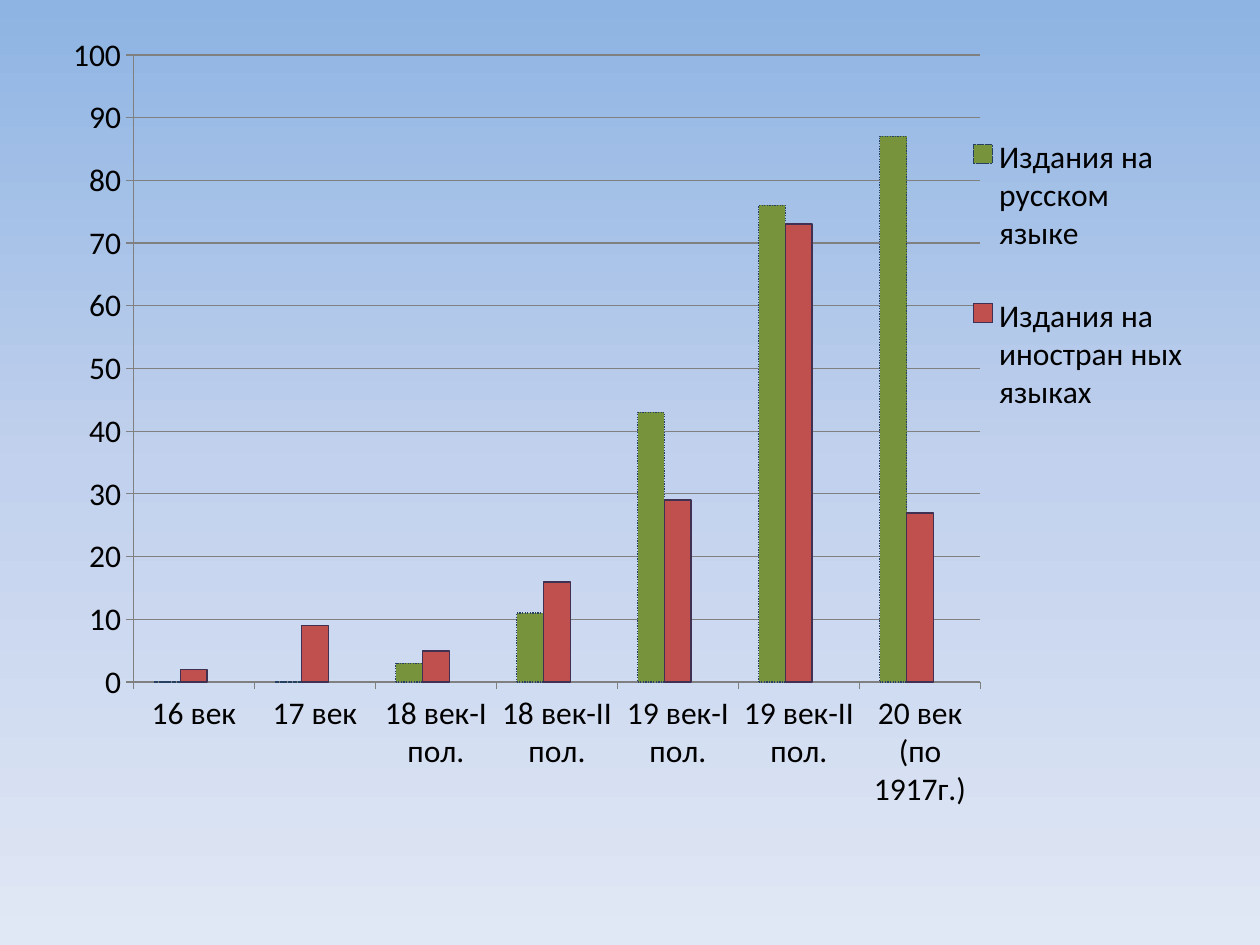
from copy import deepcopy

from lxml import etree
from pptx import Presentation
from pptx import util as u
from pptx.chart.data import CategoryChartData
from pptx.dml.color import RGBColor
from pptx.enum import chart as ch
from pptx.enum import dml
from pptx.oxml.ns import qn

WIDTH, HEIGHT = u.Inches(10), u.Inches(7.5)
COLORS = {
    "top": "8EB4E3", "middle": "C2D1ED", "bottom": "E1E8F5",
    "axis": "808080", "text": "000000",
    "russian": "77933C", "russian_line": "254061",
    "foreign": "C0504D", "foreign_line": "403152",
    "spare": "9BBB59",
}
CENTURIES = ["16 век", "17 век", "18 век-I пол.", "18 век-II пол.",
             "19 век-I пол.", "19 век-II пол.", "20 век (по 1917г.)"]
EDITIONS = [
    ("Издания на русском языке", [0, 0, 3, 11, 43, 76, 87],
     "russian", "russian_line", 0.75),
    ("Издания на иностран ных языках", [2, 9, 5, 16, 29, 73, 27],
     "foreign", "foreign_line", 1),
    ("Series 3", [None] * len(CENTURIES), "spare", None, 0),
]


def rgb(name):
    """Return a palette colour."""
    return RGBColor.from_string(COLORS[name])


def paint_line(line, color, width):
    """Give a line its colour and width in points."""
    line.color.rgb = rgb(color)
    line.width = u.Pt(width)


def paint_background(slide):
    """Fill the slide with a three-stop gradient running downwards."""
    fill = slide.background.fill
    fill.gradient()
    fill.gradient_angle = 270
    first = slide.element.xpath(".//p:bg//a:gs")[0]
    first.addnext(deepcopy(first))
    for index, name in enumerate(("top", "middle", "bottom")):
        stop = fill.gradient_stops[index]
        stop.color.rgb = rgb(name)
        stop.position = index / 2


def make_layout(box, inner=False):
    """Return a manual layout for a box given as shares of the chart."""
    layout = etree.Element(qn("c:layout"))
    manual = etree.SubElement(layout, qn("c:manualLayout"))
    settings = [("layoutTarget", "inner")] if inner else []
    settings += [("xMode", "edge"), ("yMode", "edge")]
    settings += zip("xywh", map(str, box))
    for tag, value in settings:
        etree.SubElement(manual, qn(f"c:{tag}")).set("val", value)
    return layout


def style_axes(chart):
    """Set the scale, tick marks, lines and gridlines."""
    for axis in (chart.category_axis, chart.value_axis):
        axis.major_tick_mark = ch.XL_TICK_MARK.OUTSIDE
        axis.minor_tick_mark = ch.XL_TICK_MARK.NONE
        paint_line(axis.format.line, "axis", 0.75)
    scale = chart.value_axis
    scale.minimum_scale, scale.maximum_scale, scale.major_unit = 0, 100, 10
    scale.has_major_gridlines = True
    paint_line(scale.major_gridlines.format.line, "axis", 0.75)


def style_legend(chart, box):
    """Place the legend and hide the entry of the empty series."""
    chart.has_legend = True
    legend = chart.legend
    legend.position = ch.XL_LEGEND_POSITION.RIGHT
    legend.include_in_layout = False
    element = chart.element.xpath(".//c:legend")[0]
    for layout in element.findall(qn("c:layout")):
        element.remove(layout)
    entry = etree.Element(qn("c:legendEntry"))
    etree.SubElement(entry, qn("c:idx")).set("val", str(len(EDITIONS) - 1))
    etree.SubElement(entry, qn("c:delete")).set("val", "1")
    position = element.find(qn("c:legendPos"))
    if position is None:
        position = etree.Element(qn("c:legendPos"), val="r")
        element.insert(0, position)
    position.addnext(entry)
    entry.addnext(make_layout(box))


def add_editions_chart(slide, left, top, width, height):
    """Add the column chart in a box given as shares of the slide."""
    data = CategoryChartData()
    data.categories = CENTURIES
    for name, values, *_ in EDITIONS:
        data.add_series(name, values)
    chart = slide.shapes.add_chart(
        ch.XL_CHART_TYPE.COLUMN_CLUSTERED,
        int(WIDTH * left), int(HEIGHT * top),
        int(WIDTH * width), int(HEIGHT * height), data).chart
    chart.has_title = False
    chart.font.size = u.Pt(18)
    chart.font.name = "Calibri"
    chart.font.color.rgb = rgb("text")
    plot = chart.plots[0]
    plot.gap_width, plot.overlap = 150, 0
    plot.vary_by_categories = False
    for series, (_, _, color, line, weight) in zip(plot.series, EDITIONS):
        series.invert_if_negative = False
        series.format.fill.solid()
        series.format.fill.fore_color.rgb = rgb(color)
        if line:
            paint_line(series.format.line, line, weight)
    plot.series[0].format.line.dash_style = dml.MSO_LINE.ROUND_DOT
    style_axes(chart)
    style_legend(chart, (0.82, 0.09, 0.18, 0.42))
    area = chart.element.xpath(".//c:plotArea")[0]
    for layout in area.findall(qn("c:layout")):
        area.remove(layout)
    area.insert(0, make_layout((0.077, 0.045, 0.73, 0.727), inner=True))


def main():
    """Build and save the presentation."""
    presentation = Presentation()
    presentation.slide_width, presentation.slide_height = WIDTH, HEIGHT
    slide = presentation.slides.add_slide(presentation.slide_layouts[6])
    paint_background(slide)
    add_editions_chart(slide, 0.035, 0.017, 0.921, 0.913)
    presentation.save("out.pptx")


if __name__ == "__main__":
    main()
